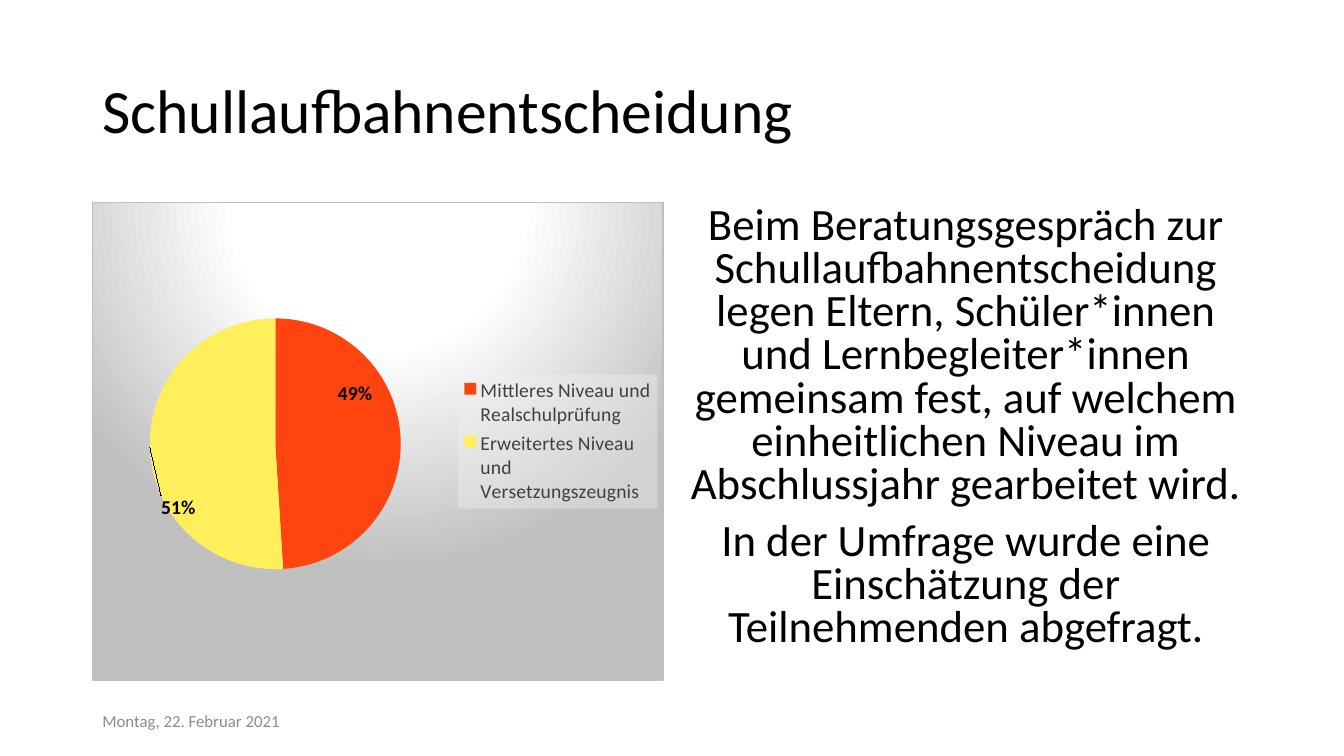
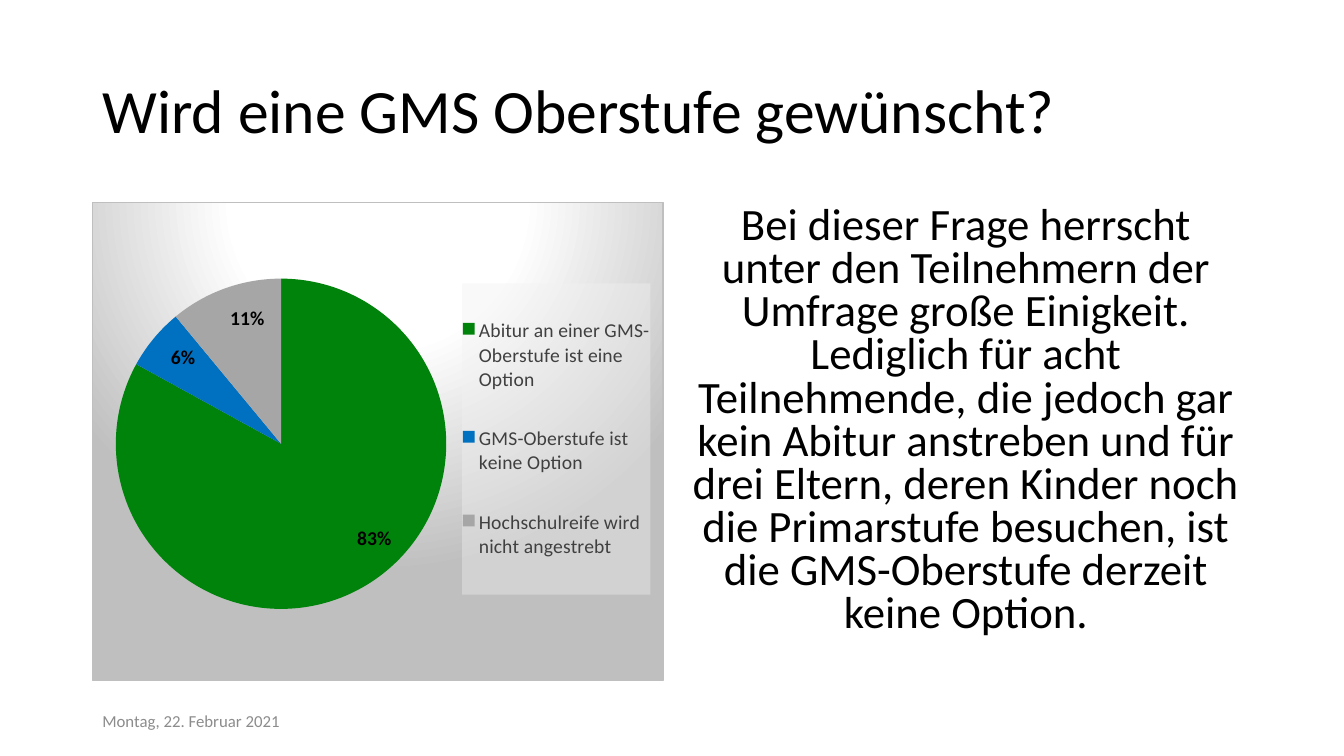
import dataclasses

import pptx
import pptx.chart.data
import pptx.dml.color
import pptx.enum.chart
import pptx.enum.text
import pptx.oxml
import pptx.oxml.ns
import pptx.util

Pt = pptx.util.Pt
ALIGN = pptx.enum.text.PP_ALIGN
ANCHOR = pptx.enum.text.MSO_ANCHOR
qn = pptx.oxml.ns.qn
DATE = "Montag, 22. Februar 2021"


@dataclasses.dataclass(frozen=True)
class Theme:
    font: str = "Calibri"
    text: str = "000000"
    muted: str = "8C8C8C"
    legend_text: str = "404040"
    legend_back: str = "F2F2F2"
    panel_light: str = "FFFFFF"
    panel_dark: str = "BFBFBF"
    orange: str = "FF440F"
    yellow: str = "FFEF5A"
    green: str = "00830A"
    blue: str = "0070C0"
    grey: str = "A6A6A6"
    title_size: int = 44
    body_size: int = 32
    chart_size: int = 10
    label_size: int = 14
    date_size: int = 12


THEME = Theme()


def rgb(color):
    return pptx.dml.color.RGBColor.from_string(color)


def set_font(font, size, color, bold=False):
    font.name, font.size, font.bold = THEME.font, Pt(size), bold
    font.color.rgb = rgb(color)


def chart_xml(markup):
    """Parse one chart element, declaring its namespaces on the outer tag."""
    tag, rest = markup.split(">", 1)
    return pptx.oxml.parse_xml(f"{tag} {pptx.oxml.ns.nsdecls('c', 'a')}>{rest}")


def layout_xml(inner=False, **fractions):
    """Manual layout; x, y, w and h are fractions of the chart."""
    target = '<c:layoutTarget val="inner"/>' if inner else ""
    modes = '<c:xMode val="edge"/><c:yMode val="edge"/>' if "w" in fractions else ""
    values = "".join(f'<c:{key} val="{value}"/>' for key, value in fractions.items())
    return chart_xml(f"<c:layout><c:manualLayout>{target}{modes}{values}</c:manualLayout></c:layout>")


def drop_layout(parent):
    for layout in parent.findall(qn("c:layout")):
        parent.remove(layout)


def write_text(box, paragraphs, *, size, color=THEME.text, align=ALIGN.LEFT,
               anchor=ANCHOR.TOP, line_spacing=1.0, before=0):
    frame = box.text_frame
    frame.word_wrap = True
    frame.vertical_anchor = anchor
    for index, text in enumerate(paragraphs):
        para = frame.paragraphs[0] if index == 0 else frame.add_paragraph()
        para.alignment = align
        para.line_spacing = line_spacing
        para.space_before = Pt(before)
        span = para.add_run()
        span.text = text
        set_font(span.font, size, color)


class SurveyDeck:
    def __init__(self):
        self.deck = pptx.Presentation()
        self.deck.slide_width, self.deck.slide_height = Pt(960), Pt(540)
        self.page = None

    def add_page(self, title):
        """Start a slide with the shared title and date."""
        self.page = self.deck.slides.add_slide(self.deck.slide_layouts[6])
        self.text(66, 28.8, 828, 104.4, [title], size=THEME.title_size,
                  anchor=ANCHOR.MIDDLE, line_spacing=0.9)
        self.text(66, 500.4, 216, 28.8, [DATE], size=THEME.date_size,
                  color=THEME.muted, anchor=ANCHOR.MIDDLE)

    def text(self, left, top, width, height, paragraphs, **style):
        box = self.page.shapes.add_textbox(Pt(left), Pt(top), Pt(width), Pt(height))
        write_text(box, paragraphs, **style)

    def body(self, *paragraphs):
        self.text(486, 144, 408, 342.7, paragraphs, size=THEME.body_size,
                  align=ALIGN.CENTER, line_spacing=0.8, before=10)

    def pie(self, slices, plot_area, legend_area):
        """Each slice is (category, percent, colour, label shift)."""
        data = pptx.chart.data.CategoryChartData()
        data.categories = [category for category, *_ in slices]
        data.add_series("Series 1", [percent for _, percent, *_ in slices])
        chart = self.page.shapes.add_chart(
            pptx.enum.chart.XL_CHART_TYPE.PIE, Pt(66), Pt(144), Pt(408), Pt(342.7), data).chart
        chart.has_title = False
        set_font(chart.font, THEME.chart_size, THEME.text)
        self.panel(chart)
        self.legend(chart, legend_area)
        plot = chart.plots[0]
        plot.vary_by_categories = True
        area = chart._chartSpace.chart.plotArea
        drop_layout(area)
        area.insert(0, layout_xml(inner=True, **plot_area))
        series = plot.series[0]
        labels = series.data_labels
        labels.show_percentage, labels.show_value = True, False
        labels.position = pptx.enum.chart.XL_LABEL_POSITION.CENTER
        set_font(labels.font, THEME.label_size, THEME.text, bold=True)
        for index, (_, _, color, shift) in enumerate(slices):
            self.slice(series.points[index], color, shift)
        for label, (*_, shift) in zip(labels._element.findall(qn("c:dLbl")), slices):
            label.find(qn("c:showVal")).set("val", "0")
            label.find(qn("c:showPercent")).set("val", "1")
            drop_layout(label)
            label.find(qn("c:idx")).addnext(layout_xml(x=shift[0], y=shift[1]))

    def slice(self, point, color, shift):
        point.format.fill.solid()
        point.format.fill.fore_color.rgb = rgb(color)
        point.format.line.fill.background()
        set_font(point.data_label.font, THEME.label_size, THEME.text, bold=True)
        point.data_label.position = pptx.enum.chart.XL_LABEL_POSITION.CENTER

    def panel(self, chart):
        """Give the chart its radial gradient and thin border."""
        stops = ((0, THEME.panel_light), (39000, THEME.panel_light), (100000, THEME.panel_dark))
        gradient = "".join(f'<a:gs pos="{position}"><a:srgbClr val="{color}"/></a:gs>'
                           for position, color in stops)
        chart._chartSpace.chart.addnext(chart_xml(
            f'<c:spPr><a:gradFill><a:gsLst>{gradient}</a:gsLst><a:path path="circle">'
            '<a:fillToRect l="50000" t="-80000" r="50000" b="180000"/></a:path></a:gradFill>'
            f'<a:ln w="{Pt(0.75)}"><a:solidFill><a:srgbClr val="{THEME.panel_dark}"/>'
            "</a:solidFill></a:ln></c:spPr>"))

    def legend(self, chart, area):
        chart.has_legend = True
        legend = chart.legend
        legend.position = pptx.enum.chart.XL_LEGEND_POSITION.RIGHT
        legend.include_in_layout = False
        set_font(legend.font, THEME.label_size, THEME.legend_text)
        element = legend._element
        drop_layout(element)
        element.find(qn("c:legendPos")).addnext(layout_xml(**area))
        element.find(qn("c:txPr")).addprevious(chart_xml(
            f'<c:spPr><a:solidFill><a:srgbClr val="{THEME.legend_back}">'
            '<a:alpha val="39000"/></a:srgbClr></a:solidFill></c:spPr>'))


def main():
    survey = SurveyDeck()

    survey.add_page("Schullaufbahnentscheidung")
    survey.body(
        "Beim Beratungsgespräch zur Schullaufbahnentscheidung legen Eltern, Schüler*innen "
        "und Lernbegleiter*innen gemeinsam fest, auf welchem einheitlichen Niveau im "
        "Abschlussjahr gearbeitet wird.",
        "In der Umfrage wurde eine Einschätzung der Teilnehmenden abgefragt.")
    survey.pie(
        [("Mittleres Niveau und Realschulprüfung", 49, THEME.orange, (0.03, -0.1)),
         ("Erweitertes Niveau und Versetzungszeugnis", 51, THEME.yellow, (-0.06, 0.13))],
        plot_area=dict(x=0.1, y=0.24, w=0.44, h=0.53),
        legend_area=dict(x=0.64, y=0.36, w=0.35, h=0.28))

    survey.add_page("Wird eine GMS Oberstufe gewünscht?")
    survey.body(
        "Bei dieser Frage herrscht unter den Teilnehmern der Umfrage große Einigkeit. "
        "Lediglich für acht Teilnehmende, die jedoch gar kein Abitur anstreben und für drei "
        "Eltern, deren Kinder noch die Primarstufe besuchen, ist die GMS-Oberstufe derzeit "
        "keine Option.")
    survey.pie(
        [("Abitur an einer GMS-Oberstufe ist eine Option", 83, THEME.green, (0.09, 0.05)),
         ("GMS-Oberstufe ist keine Option", 6, THEME.blue, (-0.06, -0.07)),
         ("Hochschulreife wird nicht angestrebt", 11, THEME.grey, (-0.01, -0.1))],
        plot_area=dict(x=0.04, y=0.16, w=0.58, h=0.69),
        legend_area=dict(x=0.65, y=0.17, w=0.33, h=0.65))

    survey.deck.save("out.pptx")


if __name__ == "__main__":
    main()
